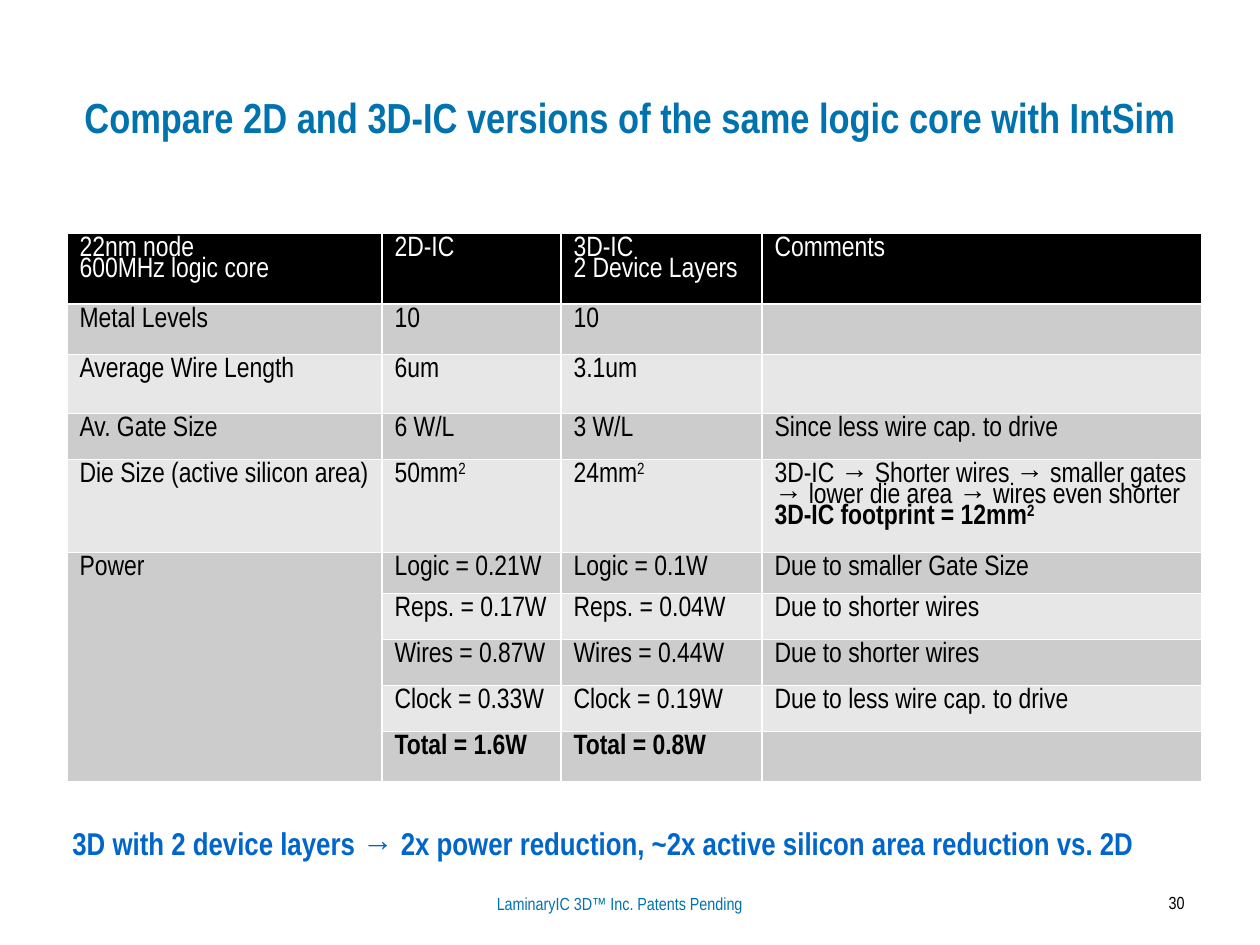
from dataclasses import dataclass
from typing import NamedTuple

from lxml import etree
from pptx import Presentation
from pptx import util as u
from pptx.dml import color
from pptx.enum import text
from pptx.oxml import ns

PX = 914400 / 126
FONT = "Arial Narrow"
COLORS = {
    "title": "0073AE",
    "takeaway": "0066CC",
    "black": "000000",
    "white": "FFFFFF",
    "dark_band": "CCCCCC",
    "light_band": "E7E7E7",
}


class Piece(NamedTuple):
    words: str
    bold: bool = False
    raised: bool = False


@dataclass
class Label:
    words: str
    left: int
    top: int
    width: int
    height: int
    size: int
    color: str
    bold: bool = False
    align: text.PP_ALIGN = text.PP_ALIGN.LEFT
    anchor: text.MSO_ANCHOR = text.MSO_ANCHOR.TOP


@dataclass
class Row:
    height: int
    cells: tuple
    bold: bool = False


LABELS = [
    Label("Compare 2D and 3D-IC versions of the same logic core with IntSim",
          63, 38, 1134, 157, 24, "title", True,
          text.PP_ALIGN.CENTER, text.MSO_ANCHOR.MIDDLE),
    Label("3D with 2 device layers → 2x power reduction, "
          "~2x active silicon area reduction vs. 2D",
          60, 818, 1134, 66, 18, "takeaway", True),
    Label("LaminaryIC 3D™ Inc. Patents Pending",
          420, 887, 399, 33, 10, "title", align=text.PP_ALIGN.CENTER),
    Label("30", 1057, 886, 140, 42, 10, "black", align=text.PP_ALIGN.RIGHT),
]

TABLE_LEFT, TABLE_TOP = 67, 233
COLUMN_WIDTHS = (315, 179, 201, 440)
POWER_ROW = 5
SQUARED = Piece("2", raised=True)
ROWS = [
    Row(71, ("22nm node\n600MHz logic core", "2D-IC",
             "3D-IC\n2 Device Layers", "Comments")),
    Row(46, ("Metal Levels", "10", "10", "")),
    Row(59, ("Average Wire Length", "6um", "3.1um", "")),
    Row(46, ("Av. Gate Size", "6 W/L", "3 W/L", "Since less wire cap. to drive")),
    Row(92, ("Die Size (active silicon area)",
             (Piece("50mm"), SQUARED),
             (Piece("24mm"), SQUARED),
             (Piece("3D-IC → Shorter wires → smaller gates "
                    "→ lower die area → wires even shorter "),
              Piece("3D-IC footprint = 12mm", bold=True),
              Piece("2", bold=True, raised=True)))),
    Row(41, ("Power", "Logic = 0.21W", "Logic = 0.1W", "Due to smaller Gate Size")),
    Row(46, ("", "Reps. = 0.17W", "Reps. = 0.04W", "Due to shorter wires")),
    Row(46, ("", "Wires = 0.87W", "Wires = 0.44W", "Due to shorter wires")),
    Row(46, ("", "Clock = 0.33W", "Clock = 0.19W", "Due to less wire cap. to drive")),
    Row(45, ("", "Total = 1.6W", "Total = 0.8W", ""), bold=True),
]


def px(length: int) -> u.Emu:
    return u.Emu(round(length * PX))


def rgb(name: str) -> color.RGBColor:
    return color.RGBColor.from_string(COLORS[name])


def style(span, size: int, color_name: str, bold: bool) -> None:
    span.font.name = FONT
    span.font.size = u.Pt(size)
    span.font.bold = bold
    span.font.color.rgb = rgb(color_name)


def add_label(page, label: Label) -> None:
    box = page.shapes.add_textbox(px(label.left), px(label.top),
                                  px(label.width), px(label.height))
    frame = box.text_frame
    frame.word_wrap = True
    frame.vertical_anchor = label.anchor
    frame.text = label.words
    para = frame.paragraphs[0]
    para.alignment = label.align
    style(para.runs[0], label.size, label.color, label.bold)


def add_borders(cell) -> None:
    properties = cell._tc.get_or_add_tcPr()
    for side in ("a:lnL", "a:lnR", "a:lnT", "a:lnB"):
        line = etree.SubElement(properties, ns.qn(side), w=str(u.Pt(1)))
        fill = etree.SubElement(line, ns.qn("a:solidFill"))
        etree.SubElement(fill, ns.qn("a:srgbClr"), val=COLORS["white"])


def fill_cell(cell, content, fill: str, ink: str, bold: bool) -> None:
    add_borders(cell)
    cell.fill.solid()
    cell.fill.fore_color.rgb = rgb(fill)
    frame = cell.text_frame
    if isinstance(content, str):
        frame.text = content
    else:
        for piece in content:
            span = frame.paragraphs[0].add_run()
            span.text = piece.words
    for para in frame.paragraphs:
        para.line_spacing = 0.8
        for span in para.runs:
            style(span, 16, ink, bold)
    if not isinstance(content, str):
        for piece, span in zip(content, frame.paragraphs[0].runs):
            span.font.bold = piece.bold
            if piece.raised:
                span.font._element.set("baseline", "30000")


def add_comparison(page) -> None:
    frame = page.shapes.add_table(
        len(ROWS), len(COLUMN_WIDTHS), px(TABLE_LEFT), px(TABLE_TOP),
        px(sum(COLUMN_WIDTHS)), px(sum(row.height for row in ROWS)))
    table = frame.table
    table.horz_banding = False
    for column, width in zip(table.columns, COLUMN_WIDTHS):
        column.width = px(width)
    for index, row in enumerate(ROWS):
        table.rows[index].height = px(row.height)
        band = "dark_band" if index % 2 else "light_band"
        fill, ink = (band, "black") if index else ("black", "white")
        for position, content in enumerate(row.cells):
            fill_cell(table.cell(index, position), content, fill, ink, row.bold)
    table.cell(POWER_ROW, 0).merge(table.cell(len(ROWS) - 1, 0))


def main() -> None:
    deck = Presentation()
    deck.slide_width, deck.slide_height = px(1260), px(945)
    page = deck.slides.add_slide(deck.slide_layouts[6])
    for label in LABELS:
        add_label(page, label)
    add_comparison(page)
    deck.save("out.pptx")


if __name__ == "__main__":
    main()
